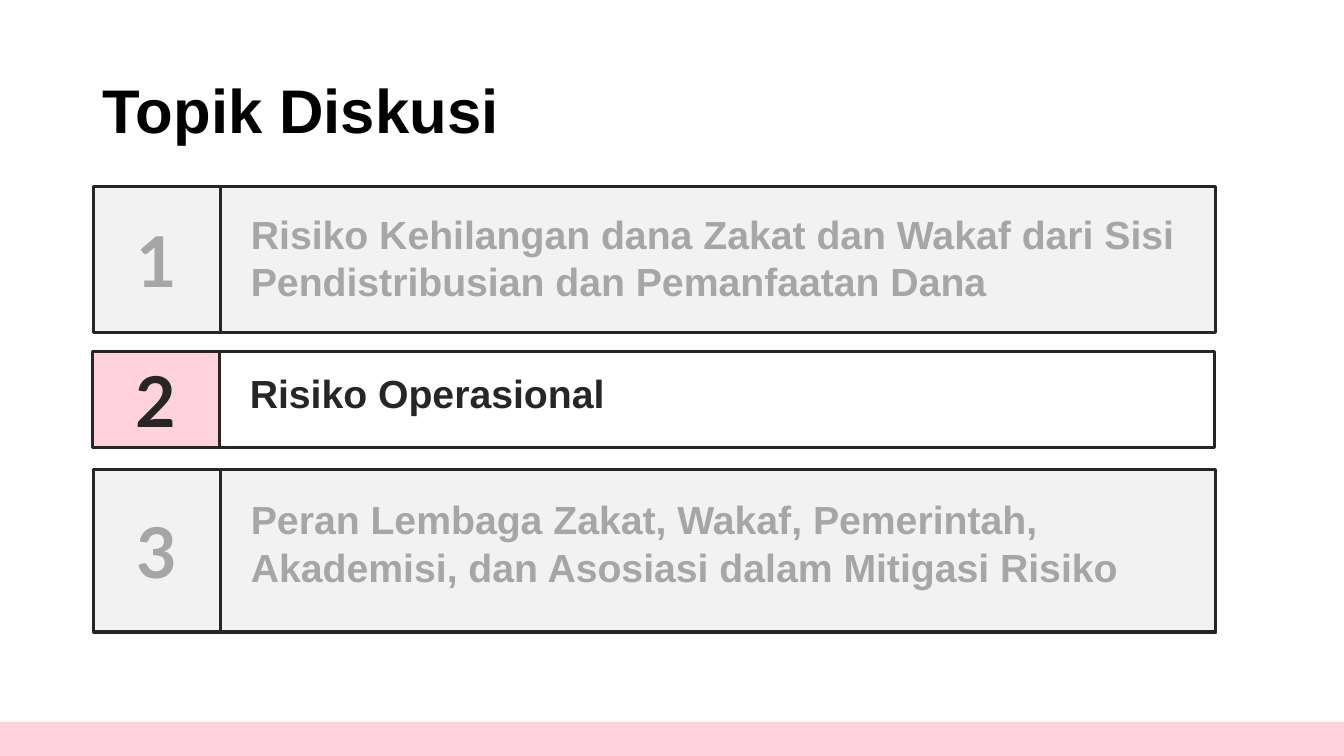
from pptx import Presentation
from pptx.dml.color import RGBColor
from pptx.enum.shapes import MSO_SHAPE
from pptx.enum.text import MSO_ANCHOR, MSO_AUTO_SIZE, PP_ALIGN
from pptx.util import Inches, Pt

COLOURS = {
    "black": "000000",
    "ink": "262626",
    "muted": "A6A6A6",
    "grey": "F2F2F2",
    "pink": "FFD2DD",
    "white": "FFFFFF",
}

# Columns, in percent of the slide width
NUMBER_WIDTH = 9.45
BODY_WIDTH = 74.04
TEXT_INDENT = 1.5
TEXT_WIDTH = 71.12
# Height of a text line, in percent of the slide height
LINE_HEIGHT = 6.23

# Text, active, left, top, height, text offset, lines (lengths in percent)
TOPICS = [
    ("Risiko Kehilangan dana Zakat dan Wakaf dari Sisi Pendistribusian dan Pemanfaatan Dana",
     False, 6.98, 24.67, 19.33, 2.53, 2),
    ("Risiko Operasional", True, 6.9, 46.53, 12.67, 1.73, 1),
    ("Peran Lembaga Zakat, Wakaf, Pemerintah, Akademisi, dan Asosiasi dalam Mitigasi Risiko",
     False, 6.98, 62.13, 21.47, 2.8, 2),
]


class AgendaSlide:
    """Style and element methods; all lengths are percent of the slide."""

    def __init__(self, presentation):
        self.width = presentation.slide_width
        self.height = presentation.slide_height
        self.slide = presentation.slides.add_slide(presentation.slide_layouts[5])

    def colour(self, name):
        return RGBColor.from_string(COLOURS[name])

    def place(self, left, top, width, height):
        return (int(self.width * left / 100), int(self.height * top / 100),
                int(self.width * width / 100), int(self.height * height / 100))

    def set_text(self, shape, text, size, colour, font="Arial", align=PP_ALIGN.LEFT,
                 anchor=MSO_ANCHOR.MIDDLE, spacing=None):
        frame = shape.text_frame
        frame.word_wrap = True
        frame.vertical_anchor = anchor
        frame.text = text
        paragraph = frame.paragraphs[0]
        paragraph.alignment = align
        paragraph.line_spacing = spacing
        paragraph.font.name = font
        paragraph.font.size = Pt(size)
        paragraph.font.bold = True
        paragraph.font.color.rgb = self.colour(colour)

    def title(self, text, *box):
        shape = self.slide.shapes.title
        shape.left, shape.top, shape.width, shape.height = self.place(*box)
        self.set_text(shape, text, 44, "black", spacing=0.9)

    def panel(self, fill, *box, outlined=True):
        shape = self.slide.shapes.add_shape(MSO_SHAPE.RECTANGLE, *self.place(*box))
        shape.shadow.inherit = False
        shape.fill.solid()
        shape.fill.fore_color.rgb = self.colour(fill)
        if outlined:
            shape.line.color.rgb = self.colour("ink")
            shape.line.width = Pt(2.25)
        else:
            shape.line.fill.background()
        return shape

    def label(self, text, colour, *box):
        shape = self.slide.shapes.add_textbox(*self.place(*box))
        self.set_text(shape, text, 28, colour, anchor=MSO_ANCHOR.TOP, spacing=Pt(33.6))
        shape.text_frame.auto_size = MSO_AUTO_SIZE.SHAPE_TO_FIT_TEXT

    def topic(self, number, text, active, left, top, height, offset, lines):
        ink = "ink" if active else "muted"
        body_left = left + NUMBER_WIDTH
        number_box = self.panel("pink" if active else "grey", left, top, NUMBER_WIDTH, height)
        self.set_text(number_box, str(number), 50, ink, font="Lato", align=PP_ALIGN.CENTER)
        self.panel("white" if active else "grey", body_left, top, BODY_WIDTH, height)
        self.label(text, ink, body_left + TEXT_INDENT, top + offset,
                   TEXT_WIDTH, 1.33 + lines * LINE_HEIGHT)


def main():
    presentation = Presentation()
    presentation.slide_width = Inches(13.33)
    presentation.slide_height = Inches(7.5)
    agenda = AgendaSlide(presentation)

    # Footer band and title
    agenda.panel("pink", 0, 95.47, 100, 4.53, outlined=False)
    agenda.title("Topik Diskusi", 6.9, 5.33, 86.27, 19.33)

    # Numbered topics
    for number, topic in enumerate(TOPICS, start=1):
        agenda.topic(number, *topic)

    presentation.save("out.pptx")


if __name__ == "__main__":
    main()
